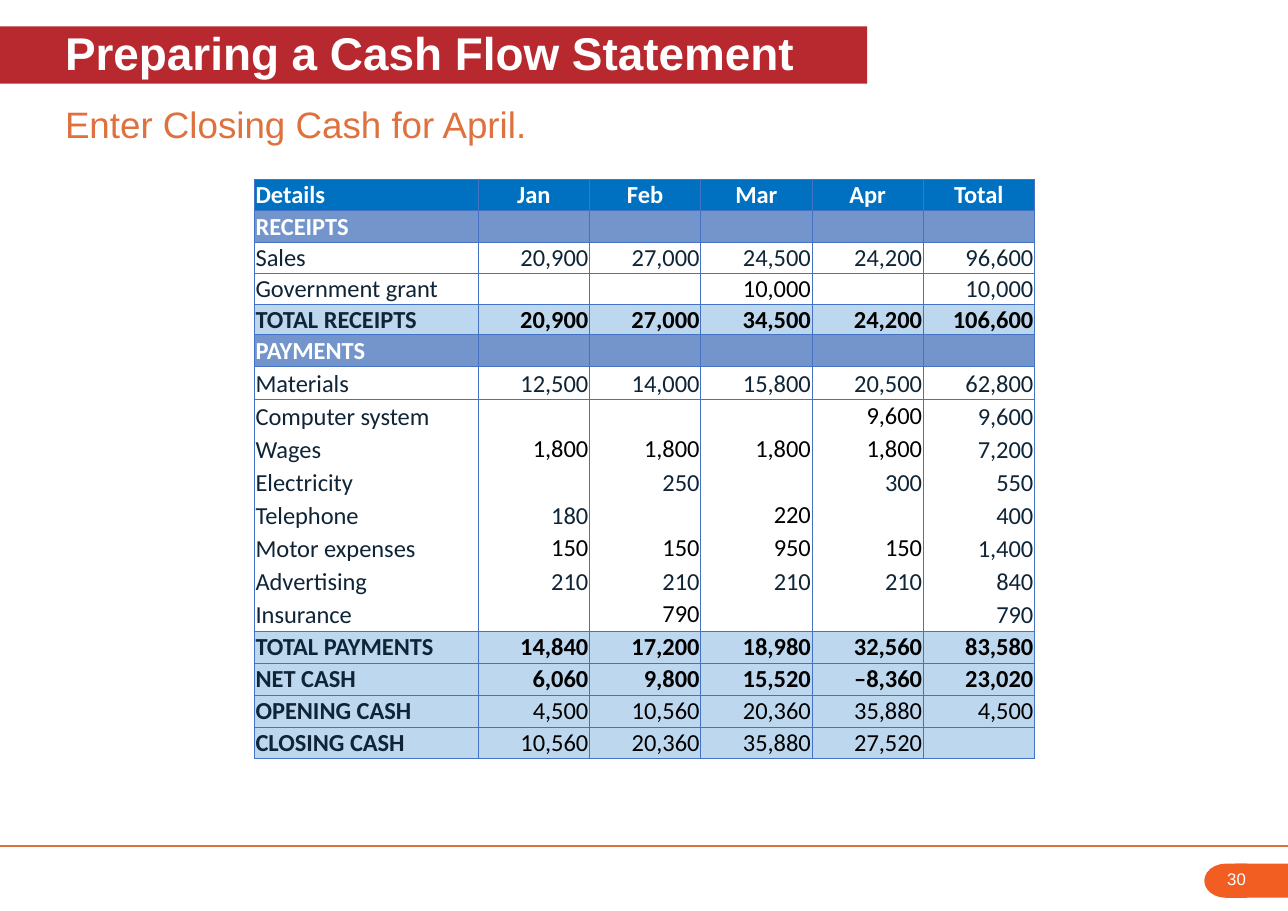
import pptx
import pptx.dml.color
import pptx.enum.shapes
import pptx.enum.text
import pptx.oxml.ns
import pptx.util
from lxml import etree

TITLE = "Preparing a Cash Flow Statement"
SUBTITLE = "Enter Closing Cash for April."
PAGE_NUMBER = "30"

# kind of row, height in px, cells
ROWS = [
    ("header", 28, ["Details", "Jan", "Feb", "Mar", "Apr", "Total"]),
    ("section", 29, ["RECEIPTS", "", "", "", "", ""]),
    ("item", 28, ["Sales", "20,900", "27,000", "24,500", "24,200", "96,600"]),
    ("item", 28, ["Government grant", "", "", "10,000", "", "10,000"]),
    ("total", 28, ["TOTAL RECEIPTS", "20,900", "27,000", "34,500", "24,200", "106,600"]),
    ("section", 29, ["PAYMENTS", "", "", "", "", ""]),
    ("item", 30, ["Materials", "12,500", "14,000", "15,800", "20,500", "62,800"]),
    ("item", 30, ["Computer system", "", "", "", "9,600", "9,600"]),
    ("item", 30, ["Wages", "1,800", "1,800", "1,800", "1,800", "7,200"]),
    ("item", 30, ["Electricity", "", "250", "", "300", "550"]),
    ("item", 30, ["Telephone", "180", "", "220", "", "400"]),
    ("item", 30, ["Motor expenses", "150", "150", "950", "150", "1,400"]),
    ("item", 30, ["Advertising", "210", "210", "210", "210", "840"]),
    ("item", 30, ["Insurance", "", "790", "", "", "790"]),
    ("total", 29, ["TOTAL PAYMENTS", "14,840", "17,200", "18,980", "32,560", "83,580"]),
    ("total", 29, ["NET CASH", "6,060", "9,800", "15,520", "–8,360", "23,020"]),
    ("balance", 29, ["OPENING CASH", "4,500", "10,560", "20,360", "35,880", "4,500"]),
    ("balance", 29, ["CLOSING CASH", "10,560", "20,360", "35,880", "27,520", ""]),
]
COLUMN_WIDTHS = [203] + [101] * 5

# columns of the item rows that are set in black
BLACK_FIGURES = {
    "Government grant": {3},
    "Computer system": {4},
    "Wages": {1, 2, 3, 4},
    "Telephone": {3},
    "Motor expenses": {1, 2, 3, 4},
    "Insurance": {2},
}

COLORS = {
    "red": "B8292F", "orange": "DF713E", "tab": "F25E22", "grid": "4472C4",
    "white": "FFFFFF", "navy": "0F2537", "black": "000000",
    "header": "0070C0", "section": "7395CB", "item": "FFFFFF",
    "total": "BDD7EE", "balance": "BDD7EE",
}
PLAIN_TABLE_STYLE = "{2D5ABB26-0587-4C30-8999-92F81FD0307C}"
PAGE_WIDTH, PAGE_HEIGHT = 1169, 827
ALIGN = pptx.enum.text.PP_ALIGN
ANCHOR = pptx.enum.text.MSO_ANCHOR
SHAPE = pptx.enum.shapes.MSO_SHAPE


def px(length):
    return pptx.util.Emu(length * 9144)


def color(name):
    return pptx.dml.color.RGBColor.from_string(COLORS[name])


def add_xml(parent, tag, **attributes):
    return etree.SubElement(parent, pptx.oxml.ns.qn(tag), attributes)


def fill_solid(target, name):
    target.fill.solid()
    target.fill.fore_color.rgb = color(name)


def place(shape, left, top, width, height):
    shape.left, shape.top, shape.width, shape.height = map(px, (left, top, width, height))


def set_text(frame, text, size, name, font="Arial", bold=False, align=ALIGN.LEFT):
    frame.text = text
    para = frame.paragraphs[0]
    para.alignment = align
    for span in para.runs:
        span.font.name, span.font.size, span.font.bold = font, pptx.util.Pt(size), bold
        span.font.color.rgb = color(name)
    if not text:
        add_xml(para._p, "a:endParaRPr", sz=str(size * 100))


def set_heading(shape, text, size, name, bold):
    frame = shape.text_frame
    frame.word_wrap = True
    frame.auto_size = pptx.enum.text.MSO_AUTO_SIZE.NONE
    frame.vertical_anchor = ANCHOR.MIDDLE
    frame.margin_left, frame.margin_bottom = px(59), px(5)
    frame.margin_top = frame.margin_right = 0
    set_text(frame, text, size, name, bold=bold)


def add_tab_shape(page, preset, left, width):
    shape = page.shapes.add_shape(preset, px(left), px(784), px(width), px(31))
    shape.shadow.inherit = False
    fill_solid(shape, "tab")
    shape.line.fill.background()
    return shape


def add_borders(cell, sides):
    for side in sides:
        line = add_xml(cell._tc.get_or_add_tcPr(), "a:ln" + side, w="6350")
        add_xml(add_xml(line, "a:solidFill"), "a:srgbClr", val=COLORS["grid"])


def border_sides(row):
    """Item rows of one block share a frame without lines between them."""
    if ROWS[row][0] != "item":
        return "LRTB"
    top = "T" if ROWS[row - 1][0] != "item" else ""
    bottom = "B" if ROWS[row + 1][0] != "item" else ""
    return "LR" + top + bottom


def cell_style(kind, label, column):
    """Return text colour, boldness and alignment."""
    align = ALIGN.RIGHT if column else ALIGN.LEFT
    if kind in ("header", "section"):
        return "white", True, ALIGN.CENTER if column else align
    if kind == "item":
        black = column in BLACK_FIGURES.get(label, ())
        return "black" if black else "navy", False, align
    return "black" if column else "navy", kind == "total" or column == 0, align


def add_cash_table(page):
    heights = [height for _, height, _ in ROWS]
    frame = page.shapes.add_table(len(ROWS), len(COLUMN_WIDTHS), px(231), px(163),
                                  px(sum(COLUMN_WIDTHS)), px(sum(heights)))
    table = frame.table
    table.first_row = table.horz_banding = False
    table._tbl.tblPr.find(pptx.oxml.ns.qn("a:tableStyleId")).text = PLAIN_TABLE_STYLE
    for column, width in zip(table.columns, COLUMN_WIDTHS):
        column.width = px(width)
    for row, (kind, height, texts) in enumerate(ROWS):
        table.rows[row].height = px(height)
        for column, text in enumerate(texts):
            cell = table.cell(row, column)
            name, bold, align = cell_style(kind, texts[0], column)
            cell.margin_left = cell.margin_top = cell.margin_right = px(1)
            cell.margin_bottom = 0
            cell.vertical_anchor = ANCHOR.TOP if name == "black" else ANCHOR.MIDDLE
            set_text(cell.text_frame, text, 16, name, "Calibri", bold, align)
            add_borders(cell, border_sides(row))
            fill_solid(cell, kind)


def add_footer(page):
    rule = page.shapes.add_connector(pptx.enum.shapes.MSO_CONNECTOR.STRAIGHT,
                                     0, px(768), px(PAGE_WIDTH), px(768))
    rule.line.color.rgb = color("orange")
    rule.line.width = pptx.util.Pt(0.75)
    add_xml(rule._element.spPr, "a:effectLst")
    add_tab_shape(page, SHAPE.FLOWCHART_DELAY, 1093, 39).rotation = 180
    add_tab_shape(page, SHAPE.RECTANGLE, 1121, 48)
    number = page.shapes.add_textbox(px(1104), px(784), px(56), px(28))
    number.text_frame.word_wrap = True
    set_text(number.text_frame, PAGE_NUMBER, 11, "white")


def main():
    deck = pptx.Presentation()
    deck.slide_width, deck.slide_height = px(PAGE_WIDTH), px(PAGE_HEIGHT)
    page = deck.slides.add_slide(deck.slide_layouts[5])
    add_footer(page)
    subtitle = page.shapes.add_textbox(0, px(89), px(PAGE_WIDTH), px(51))
    set_heading(subtitle, SUBTITLE, 24, "orange", False)
    title = page.shapes.title
    place(title, 0, 24, 787, 52)
    fill_solid(title, "red")
    set_heading(title, TITLE, 30, "white", True)
    add_cash_table(page)
    deck.save("out.pptx")


if __name__ == "__main__":
    main()
